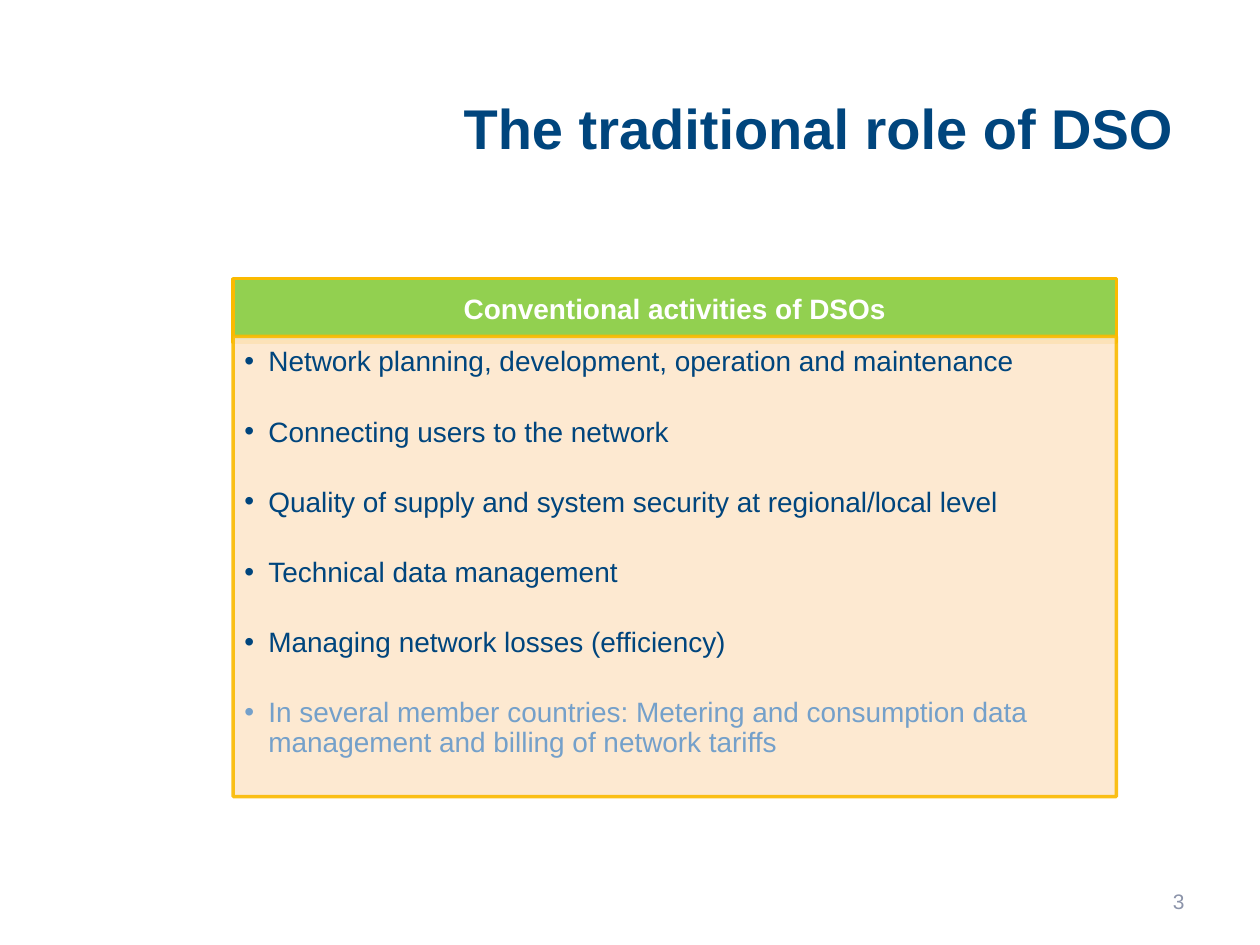
from dataclasses import dataclass

from lxml import etree
from pptx import Presentation
from pptx import util as u
from pptx.dml.color import RGBColor
from pptx.enum import shapes, text
from pptx.oxml import ns

WIDTH, HEIGHT = 10, 7.5
NAVY, PALE_BLUE, GRAY = "00457D", "74A0CA", "8C94AA"
GREEN, CREAM, AMBER, WHITE = "92D050", "FDE7CC", "FABA00", "FFFFFF"


@dataclass(frozen=True)
class Area:
    left: float
    top: float
    width: float
    height: float

    def lengths(self) -> tuple:
        sides = (self.left * WIDTH, self.top * HEIGHT,
                 self.width * WIDTH, self.height * HEIGHT)
        return tuple(u.Inches(side) for side in sides)


@dataclass(frozen=True)
class Activity:
    words: str
    color: str = NAVY


TITLE = Area(0.358, 0.063, 0.606, 0.143)
HEADER = Area(0.185, 0.295, 0.701, 0.067)
LIST = Area(0.185, 0.356, 0.701, 0.487)
NUMBER = Area(0.717, 0.927, 0.233, 0.053)

ACTIVITIES = [
    Activity("Network planning, development, operation and maintenance"),
    Activity("Connecting users to the network"),
    Activity("Quality of supply and system security at regional/local level"),
    Activity("Technical data management"),
    Activity("Managing network losses (efficiency)"),
    Activity("In several member countries: Metering and consumption data "
             "management and billing of network tariffs", PALE_BLUE),
]


def rgb(color: str) -> RGBColor:
    return RGBColor.from_string(color)


def place(shape, area: Area) -> None:
    shape.left, shape.top, shape.width, shape.height = area.lengths()


def set_frame(shape, margins=(0.1, 0.05, 0.1, 0.05), anchor=text.MSO_ANCHOR.MIDDLE):
    frame = shape.text_frame
    frame.word_wrap = True
    frame.auto_size = text.MSO_AUTO_SIZE.NONE
    frame.vertical_anchor = anchor
    (frame.margin_left, frame.margin_top,
     frame.margin_right, frame.margin_bottom) = map(u.Inches, margins)
    return frame


def write(para, words: str, *, size: float, color: str, bold: bool = False,
          align=text.PP_ALIGN.LEFT, spacing: float = 1.0, after: float = 0) -> None:
    para.alignment = align
    para.line_spacing = spacing
    para.space_before = u.Pt(0)
    para.space_after = u.Pt(after)
    span = para.add_run()
    span.text = words
    span.font.name = "Arial"
    span.font.size = u.Pt(size)
    span.font.bold = bold
    span.font.color.rgb = rgb(color)


def add_bullet(para, indent: float) -> None:
    properties = para._p.get_or_add_pPr()
    properties.set("marL", str(u.Inches(indent)))
    properties.set("indent", str(-u.Inches(indent)))
    etree.SubElement(properties, ns.qn("a:buFont"), typeface="Arial")
    etree.SubElement(properties, ns.qn("a:buChar"), char="•")


def paint(shape, fill: str, opacity: int = 100) -> None:
    shape.fill.solid()
    shape.fill.fore_color.rgb = rgb(fill)
    shape.line.color.rgb = rgb(AMBER)
    shape.line.width = u.Pt(2)
    if opacity < 100:
        for color in shape._element.spPr.iter(ns.qn("a:srgbClr")):
            etree.SubElement(color, ns.qn("a:alpha"), val=str(opacity * 1000))


def main() -> None:
    deck = Presentation()
    deck.slide_width, deck.slide_height = u.Inches(WIDTH), u.Inches(HEIGHT)
    page = deck.slides.add_slide(deck.slide_layouts[1])

    title = page.shapes.title
    place(title, TITLE)
    write(set_frame(title).paragraphs[0], "The traditional role of DSO",
          size=32, color=NAVY, bold=True)

    header = page.shapes.add_shape(shapes.MSO_SHAPE.RECTANGLE, *HEADER.lengths())
    header.shadow.inherit = False
    paint(header, GREEN)
    write(set_frame(header, (0.12, 0.07, 0.12, 0.07)).paragraphs[0],
          "Conventional activities of DSOs", size=16, color=WHITE, bold=True,
          align=text.PP_ALIGN.CENTER, spacing=0.9)

    body = page.placeholders[1]
    place(body, LIST)
    paint(body, CREAM, opacity=90)
    header._element.addnext(body._element)
    frame = set_frame(body, (0.09, 0.09, 0.12, 0.14), text.MSO_ANCHOR.TOP)
    for index, activity in enumerate(ACTIVITIES):
        para = frame.add_paragraph() if index else frame.paragraphs[0]
        add_bullet(para, 0.19)
        write(para, activity.words, size=16, color=activity.color,
              spacing=0.9, after=22.8)

    number = page.shapes.add_textbox(*NUMBER.lengths())
    write(set_frame(number).paragraphs[0], "3", size=12, color=GRAY,
          align=text.PP_ALIGN.RIGHT)

    deck.save("out.pptx")


if __name__ == "__main__":
    main()
